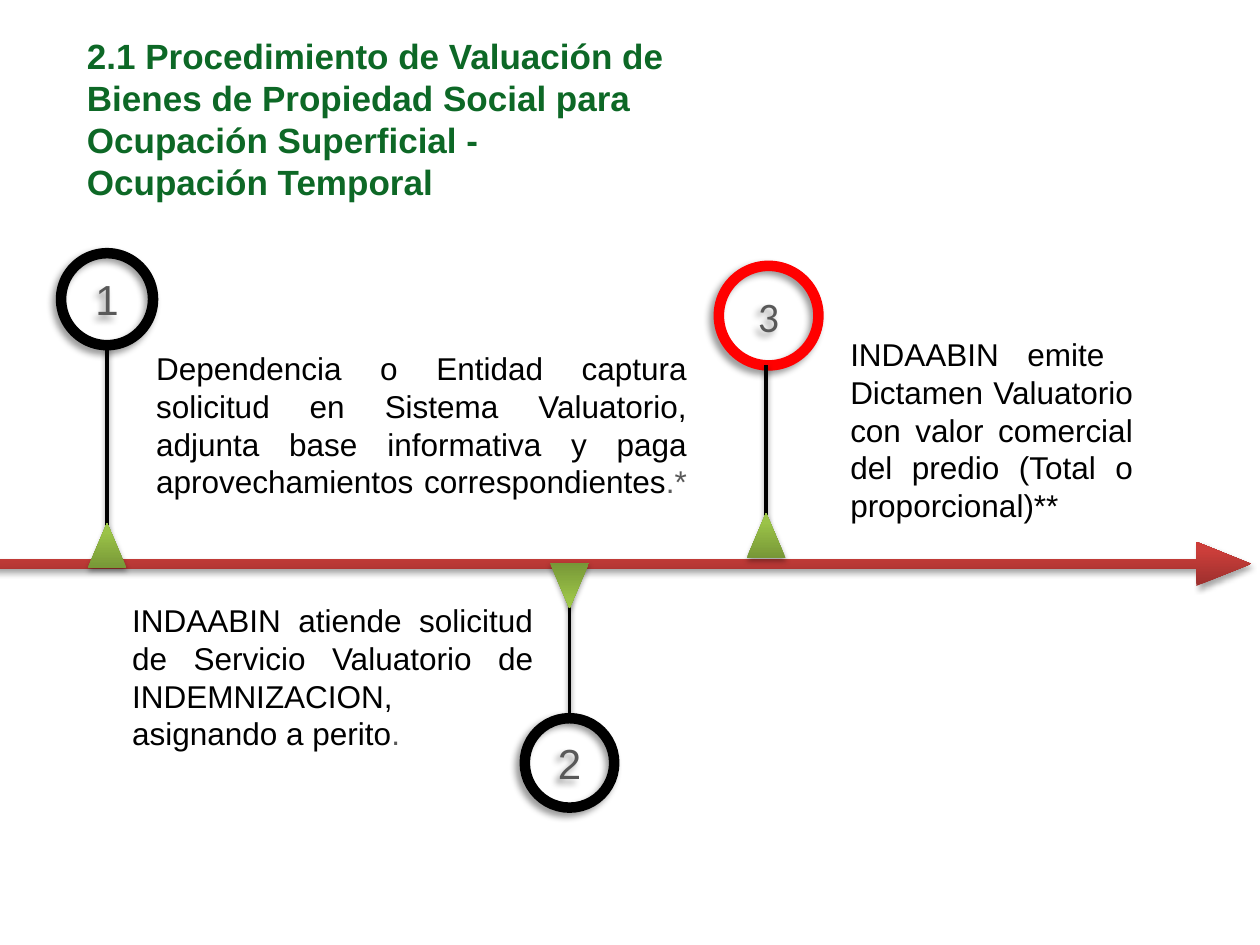
from dataclasses import dataclass
from lxml.etree import SubElement
from pptx import Presentation
from pptx.dml.color import RGBColor
from pptx.enum.shapes import MSO_CONNECTOR, MSO_SHAPE
from pptx.enum.text import MSO_ANCHOR, PP_ALIGN
from pptx.oxml.ns import qn
from pptx.util import Inches, Pt


@dataclass(frozen=True)
class Theme:
    title: str = "0D6826"
    body: str = "000000"
    muted: str = "595959"
    arrow: tuple = ((0, "9C2F2D"), (80, "CB3E3A"), (100, "CE3B37"))
    marker: tuple = ((0, "779737"), (80, "9BC348"), (100, "9DC746"))
    font: str = "Arial"
    title_size: int = 20
    body_size: int = 18
    number_size: int = 24
    ring_width: int = 6
    stem_width: int = 2
    ring_shadow: tuple = (40, 4, 3, 135)
    stem_shadow: tuple = (38, 3.1, 1.6, 90)
    solid_shadow: tuple = (35, 3.1, 1.8, 90)


THEME = Theme()
TITLE = ("2.1 Procedimiento de Valuación de Bienes de Propiedad Social para "
         "Ocupación Superficial - Ocupación Temporal")
TITLE_BOX = (0.59, 0.22, 4.8, 1.45)
ARROW_BOX = (-0.04, 4.3, 9.97, 0.35)
MARKER_WIDTH, MARKER_HEIGHT = 0.31, 0.36
STAGES = [
    dict(number="1", font="Arial", ring="000000", axis=0.85, center=0.85,
         top=2.01, diameter=0.73, marker_top=4.15, above=True,
         box=(1.14, 2.72, 4.41, 1.31),
         runs=[("Dependencia o Entidad captura solicitud en Sistema Valuatorio, "
                "adjunta base informativa y paga aprovechamientos correspondientes",
                THEME.body), (".* ", THEME.muted)]),
    dict(number="2", font="Arial", ring="000000", axis=4.52, center=4.52,
         top=5.7, diameter=0.71, marker_top=4.47, above=False,
         box=(0.95, 4.72, 3.38, 1.65),
         runs=[("INDAABIN atiende solicitud de Servicio Valuatorio de "
                "INDEMNIZACION, asignando a perito", THEME.body), (".", THEME.muted)]),
    dict(number="3", font="Calibri", ring="FF0000", axis=6.08, center=6.1,
         top=2.11, diameter=0.79, marker_top=4.07, above=True,
         box=(6.65, 2.61, 2.44, 1.62),
         runs=[("INDAABIN emite  Dictamen Valuatorio con valor comercial del "
                "predio (Total o proporcional)**", THEME.body)]),
]


def inches(values):
    return [Inches(value) for value in values]


def set_font(font, size, color, name=THEME.font, bold=False):
    font.size, font.name, font.bold = Pt(size), name, bold
    font.color.rgb = RGBColor.from_string(color)


def add_color(parent, color):
    return SubElement(parent, qn("a:srgbClr"), val=color)


def add_shadow(shape, shadow):
    opacity, blur, distance, angle = shadow
    effects = SubElement(shape._element.spPr, qn("a:effectLst"))
    outer = SubElement(effects, qn("a:outerShdw"), blurRad=str(Pt(blur)),
                       dist=str(Pt(distance)), dir=str(angle * 60000), rotWithShape="0")
    SubElement(add_color(outer, "000000"), qn("a:alpha"), val=str(opacity * 1000))


def add_gradient_shape(shapes, kind, box, stops):
    shape = shapes.add_shape(kind, *inches(box))
    shape.line.fill.background()
    shape.fill.gradient()
    shape.fill.gradient_angle = 90
    stop_list = shape._element.spPr.find(qn("a:gradFill")).find(qn("a:gsLst"))
    stop_list.clear()
    for position, color in stops:
        add_color(SubElement(stop_list, qn("a:gs"), pos=str(position * 1000)), color)
    add_shadow(shape, THEME.solid_shadow)
    return shape


def add_ring(shapes, stage):
    size = stage["diameter"]
    ring = shapes.add_shape(
        MSO_SHAPE.OVAL, *inches((stage["center"] - size / 2, stage["top"], size, size)))
    ring.fill.background()
    ring.line.color.rgb = RGBColor.from_string(stage["ring"])
    ring.line.width = Pt(THEME.ring_width)
    add_shadow(ring, THEME.ring_shadow)
    frame = ring.text_frame
    frame.margin_left = frame.margin_right = frame.margin_top = frame.margin_bottom = 0
    frame.vertical_anchor = MSO_ANCHOR.MIDDLE
    paragraph = frame.paragraphs[0]
    paragraph.text = stage["number"]
    paragraph.alignment = PP_ALIGN.CENTER
    set_font(paragraph.font, THEME.number_size, THEME.muted, stage["font"])
    return ring


def add_stem(shapes, stage, ring):
    ring_edge = stage["top"] + (stage["diameter"] if stage["above"] else 0)
    marker_middle = stage["marker_top"] + MARKER_HEIGHT / 2
    stem = shapes.add_connector(MSO_CONNECTOR.STRAIGHT, *inches(
        (stage["axis"], ring_edge, stage["axis"], marker_middle)))
    if stage["axis"] == stage["center"]:
        stem.begin_connect(ring, 2 if stage["above"] else 0)
    stem.line.color.rgb = RGBColor.from_string(THEME.body)
    stem.line.width = Pt(THEME.stem_width)
    add_shadow(stem, THEME.stem_shadow)


def add_description(shapes, stage):
    frame = shapes.add_textbox(*inches(stage["box"])).text_frame
    frame.word_wrap = True
    paragraph = frame.paragraphs[0]
    paragraph.alignment = PP_ALIGN.JUSTIFY
    for text, color in stage["runs"]:
        run = paragraph.add_run()
        run.text = text
        set_font(run.font, THEME.body_size, color)


def add_marker(shapes, stage):
    box = (stage["axis"] - MARKER_WIDTH / 2, stage["marker_top"], MARKER_WIDTH, MARKER_HEIGHT)
    marker = add_gradient_shape(shapes, MSO_SHAPE.ISOSCELES_TRIANGLE, box, THEME.marker)
    if not stage["above"]:
        marker._element.spPr.find(qn("a:xfrm")).set("flipV", "1")


def add_title(slide):
    title = slide.shapes.title
    title.left, title.top, title.width, title.height = inches(TITLE_BOX)
    frame = title.text_frame
    frame.text = TITLE
    frame.word_wrap = True
    frame.vertical_anchor = MSO_ANCHOR.TOP
    paragraph = frame.paragraphs[0]
    paragraph.alignment = PP_ALIGN.LEFT
    paragraph.space_before = Pt(0)
    set_font(paragraph.font, THEME.title_size, THEME.title, bold=True)


def main():
    presentation = Presentation()
    presentation.slide_width, presentation.slide_height = Inches(10), Inches(7.5)
    slide = presentation.slides.add_slide(presentation.slide_layouts[5])
    add_title(slide)
    arrow = add_gradient_shape(slide.shapes, MSO_SHAPE.RIGHT_ARROW, ARROW_BOX, THEME.arrow)
    arrow.adjustments[0], arrow.adjustments[1] = 0.21, 1.24
    for stage in STAGES:
        ring = add_ring(slide.shapes, stage)
        add_stem(slide.shapes, stage, ring)
        add_description(slide.shapes, stage)
        add_marker(slide.shapes, stage)
    presentation.save("out.pptx")


if __name__ == "__main__":
    main()
